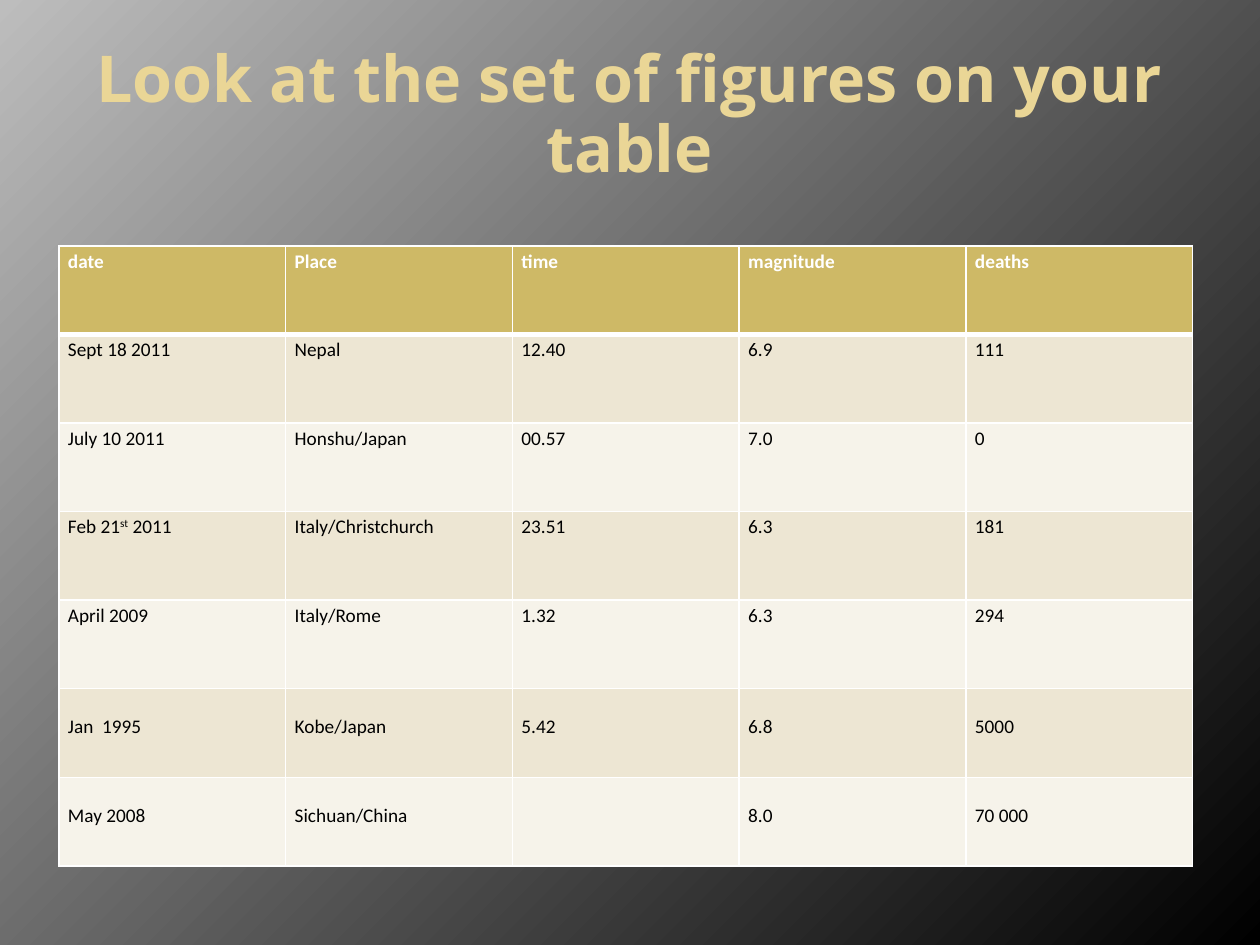
from dataclasses import dataclass

from pptx import Presentation
from pptx.dml.color import RGBColor as RGB
from pptx.enum.text import MSO_ANCHOR as Anchor, PP_ALIGN as Align
from pptx.oxml import parse_xml
from pptx.oxml.ns import nsdecls, qn
from pptx.util import Pt

SCALE = 914400 // 126


@dataclass(frozen=True)
class Theme:
    backdrop: tuple = ("BDBDBD", "000000")
    title_fill: tuple = ("EAD696", "E7D081")
    header: str = "CEB966"
    bands: tuple = ("EDE6D3", "F6F3EA")
    light: str = "FFFFFF"
    dark: str = "000000"
    title_font: str = "Open Sans"
    body_font: str = "Calibri"
    title_size: float = 36.9
    body_size: int = 11


THEME = Theme()
TITLE = "Look at the set of figures on your table"
HEADINGS = ("date", "Place", "time", "magnitude", "deaths")
QUAKES = (
    ("Sept 18 2011", "Nepal", "12.40", "6.9", "111"),
    ("July 10 2011", "Honshu/Japan", "00.57", "7.0", "0"),
    (("Feb 21", "st", " 2011"), "Italy/Christchurch", "23.51", "6.3", "181"),
    ("April 2009", "Italy/Rome", "1.32", "6.3", "294"),
    ("Jan  1995", "Kobe/Japan", "5.42", "6.8", "5000"),
    ("May 2008", "Sichuan/China", "", "8.0", "70 000"),
)
FIRST_LOWERED_ROW = 5


def px(n):
    return n * SCALE


def set_gradient(fill, colours):
    fill.gradient()
    for stop, colour in zip(fill.gradient_stops, colours):
        stop.color.rgb = RGB.from_string(colour)


def set_background(s):
    set_gradient(s.background.fill, THEME.backdrop)
    lin = s.element.find(".//" + qn("a:lin"))
    lin.getparent().replace(lin, parse_xml(
        f'<a:path {nsdecls("a")} path="circle">'
        '<a:fillToRect r="100000" b="100000"/></a:path>'))


def add_title(s, text, box):
    tf = s.shapes.add_textbox(*map(px, box)).text_frame
    tf.word_wrap = True
    tf.vertical_anchor = Anchor.MIDDLE
    tf.text = text
    p = tf.paragraphs[0]
    p.alignment = Align.CENTER
    p.line_spacing = 0.9
    font = p.runs[0].font
    font.name, font.size, font.bold = THEME.title_font, Pt(THEME.title_size), True
    set_gradient(font.fill, THEME.title_fill)
    font.fill.gradient_stops[0].position = 0.73
    font.fill.gradient_angle = 280


def set_borders(cell, row):
    widths = {"L": 1, "R": 1, "T": 3 if row == 1 else 1, "B": 3 if row == 0 else 1}
    tc_pr = cell._tc.get_or_add_tcPr()
    for side, width in widths.items():
        tc_pr.append(parse_xml(
            f'<a:ln{side} {nsdecls("a")} w="{Pt(width)}"><a:solidFill>'
            f'<a:srgbClr val="{THEME.light}"/></a:solidFill></a:ln{side}>'))


def fill_cell(cell, row, content):
    header = row == 0
    set_borders(cell, row)
    cell.fill.solid()
    colour = THEME.header if header else THEME.bands[(row - 1) % 2]
    cell.fill.fore_color.rgb = RGB.from_string(colour)
    cell.margin_left = cell.margin_right = px(9)
    cell.margin_top = px(23 if row >= FIRST_LOWERED_ROW else 0)
    cell.margin_bottom = 0
    p = cell.text_frame.paragraphs[0]
    p.line_spacing = 1.15
    p.font.size = Pt(THEME.body_size)
    parts = (content,) if isinstance(content, str) else content
    for i, part in enumerate(parts):
        if not part:
            continue
        r = p.add_run()
        r.text = part
        r.font.name, r.font.size, r.font.bold = THEME.body_font, Pt(THEME.body_size), header
        r.font.color.rgb = RGB.from_string(THEME.light if header else THEME.dark)
        if i == 1:
            r.font._element.set("baseline", "30000")


def add_quake_table(s, box):
    rows = (HEADINGS,) + QUAKES
    table = s.shapes.add_table(len(rows), len(HEADINGS), *map(px, box)).table
    for i, row in enumerate(rows):
        for j, content in enumerate(row):
            fill_cell(table.cell(i, j), i, content)


def main():
    prs = Presentation()
    prs.slide_width, prs.slide_height = px(1260), px(945)
    s = prs.slides.add_slide(prs.slide_layouts[6])
    set_background(s)
    add_title(s, TITLE, (63, 38, 1134, 157))
    add_quake_table(s, (59, 246, 1134, 620))
    prs.save("out.pptx")


if __name__ == "__main__":
    main()
